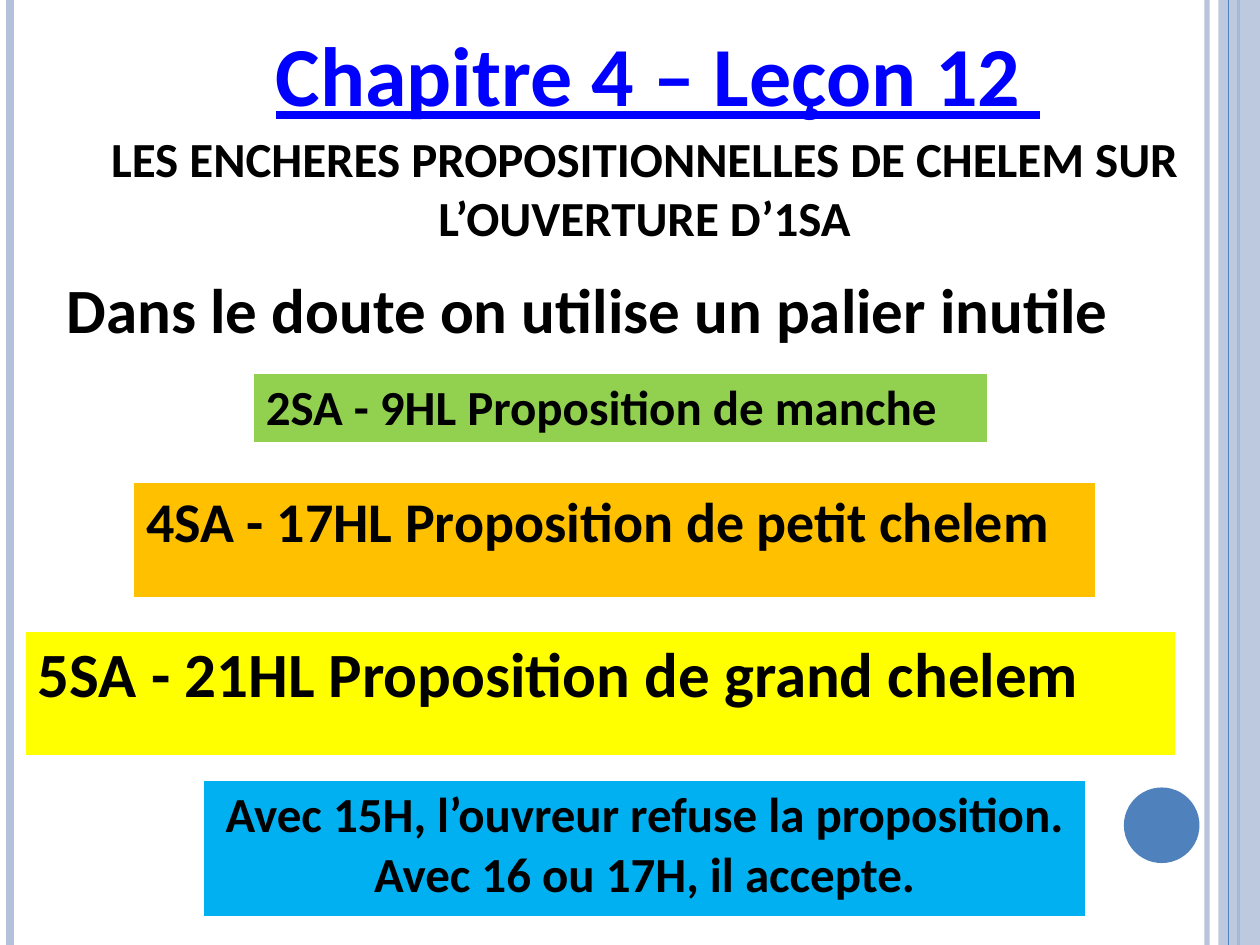
from pptx import Presentation
from pptx.dml.color import RGBColor
from pptx.enum.shapes import MSO_CONNECTOR as Line, MSO_SHAPE as Form
from pptx.enum.text import MSO_ANCHOR as Anchor, MSO_AUTO_SIZE as Fit, PP_ALIGN as Align
from pptx.oxml import parse_xml
from pptx.oxml.ns import nsdecls, qn
from pptx.util import Inches, Pt
from lxml.etree import SubElement


def tint(code):
    return RGBColor.from_string(code)


def place(box):
    return [Inches(v) for v in box]


class Deck:
    font = {"name": "Calibri", "bold": True}
    pale, blue, ink, white = "B3C1DB", "4F81BD", "000000", "FFFFFF"

    def __init__(self):
        self.prs = Presentation()
        self.prs.slide_width, self.prs.slide_height = place((10, 7.5))
        self.slide = self.prs.slides.add_slide(self.prs.slide_layouts[5])
        self.items = self.slide.shapes

    def fade(self, fill, rate):
        node = fill._xPr.find(qn("a:solidFill"))[0]
        SubElement(node, qn("a:alpha"), val=str(rate * 1000))

    def label(self, frame, text, size, align=Align.LEFT, **more):
        frame.word_wrap = True
        frame.text = text
        code = more.pop("color", self.ink)
        for para in frame.paragraphs:
            para.alignment = align
            for run in para.runs:
                for key, value in {**self.font, "size": Pt(size), **more}.items():
                    setattr(run.font, key, value)
                run.font.color.rgb = tint(code)

    def title(self, box, text, size, **more):
        shape = self.items.title
        shape.left, shape.top, shape.width, shape.height = place(box)
        frame = shape.text_frame
        frame.vertical_anchor = Anchor.TOP
        frame.auto_size = Fit.NONE
        self.label(frame, text, size, **more)

    def text(self, box, text, size, align=Align.LEFT):
        self.label(self.items.add_textbox(*place(box)).text_frame, text, size, align)

    def rule(self, x, code, width, rate=100):
        line = self.items.add_connector(Line.STRAIGHT, *place((x, 0, x, 7.5)))
        line.line.color.rgb = tint(code)
        line.line.width = Pt(width)
        SubElement(line._element.spPr, qn("a:effectLst"))
        if rate < 100:
            self.fade(line.line.fill, rate)

    def shape(self, form, box, code, rate=100):
        shape = self.items.add_shape(form, *place(box))
        shape.shadow.inherit = False
        shape.line.fill.background()
        shape.fill.solid()
        shape.fill.fore_color.rgb = tint(code)
        if rate < 100:
            self.fade(shape.fill, rate)

    def table(self, box, code, text, size, align=Align.LEFT):
        table = self.items.add_table(1, 1, *place(box)).table
        table.first_row = table.horz_banding = False
        cell = table.cell(0, 0)
        cell.fill.solid()
        cell.fill.fore_color.rgb = tint(code)
        self.label(cell.text_frame, text, size, align)
        edges = {"lnL": 1, "lnR": 1, "lnT": 1, "lnB": 3}
        for spot, (side, width) in enumerate(edges.items()):
            edge = parse_xml(
                f'<a:{side} {nsdecls("a")} w="{Pt(width)}"><a:solidFill>'
                f'<a:srgbClr val="{self.white}"/></a:solidFill></a:{side}>')
            cell._tc.tcPr.insert(spot, edge)


def main():
    deck = Deck()
    deck.rule(9.58, deck.pale, 3, 93)
    deck.rule(0.08, deck.pale, 4.5)
    deck.rule(9.83, deck.blue, 1.5)
    deck.shape(Form.RECTANGLE, (9.67, 0, 0.33, 7.5), deck.pale, 87)
    deck.rule(9.75, deck.blue, 0.75)
    deck.shape(Form.OVAL, (8.92, 6.25, 0.6, 0.6), deck.blue)
    deck.title((2.09, 0.13, 7.48, 0.91), "Chapitre 4 – Leçon 12 ", 48,
               color="0000FF", underline=True)
    deck.text((0.51, 0.97, 9.21, 1.04),
              "LES ENCHERES PROPOSITIONNELLES DE CHELEM SUR L’OUVERTURE D’1SA",
              28, Align.CENTER)
    deck.text((0.43, 2.1, 8.9, 0.71), "Dans le doute on utilise un palier inutile", 36)
    bids = [
        ((2.01, 2.96, 5.83, 0.57), "92D050", "2SA - 9HL Proposition de manche", 28),
        ((1.06, 3.83, 7.64, 0.93), "FFC000", "4SA - 17HL Proposition de petit chelem", 32),
        ((0.2, 5.01, 9.13, 1), "FFFF00", "5SA - 21HL Proposition de grand chelem", 36),
        ((1.61, 6.19, 7.01, 1.1), "00B0F0",
         "Avec 15H, l’ouvreur refuse la proposition.\nAvec 16 ou 17H, il accepte.",
         28, Align.CENTER),
    ]
    for bid in bids:
        deck.table(*bid)
    deck.prs.save("out.pptx")


if __name__ == "__main__":
    main()
